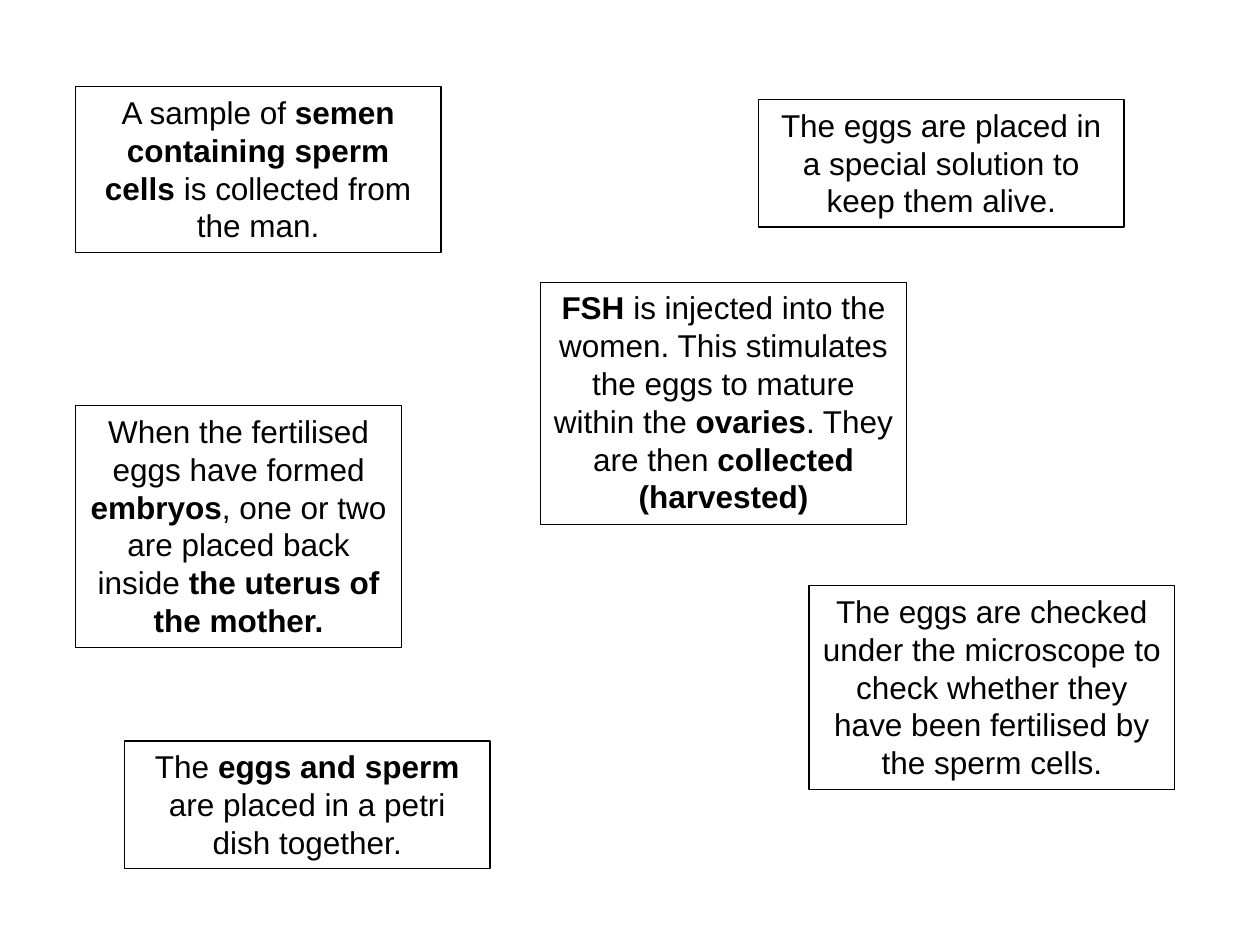
"""Build a slide of six scattered cards describing the stages of IVF."""
from dataclasses import dataclass

from pptx import Presentation
from pptx.dml.color import RGBColor
from pptx.enum.text import MSO_AUTO_SIZE, PP_ALIGN
from pptx.util import Cm, Pt

CENTER = PP_ALIGN.CENTER
GROW = MSO_AUTO_SIZE.SHAPE_TO_FIT_TEXT
BLANK_LAYOUT = 6
BOLD_MARK = "*"


@dataclass(frozen=True)
class Theme:
    font: str = "Arial"
    size: Pt = Pt(18)
    ink: RGBColor = RGBColor(0, 0, 0)
    border: Pt = Pt(0.75)
    card_width: float = 7.37
    narrow_width: float = 6.58
    line_height: float = 0.77
    padding: float = 0.26


THEME = Theme()

STAGES = [
    (10.9, 5.69, THEME.card_width, 6,
     "*FSH* is injected into the women. This stimulates the eggs to mature "
     "within the *ovaries*. They are then *collected (harvested)*"),
    (1.52, 1.75, THEME.card_width, 4,
     "A sample of *semen containing sperm cells *is collected from the man."),
    (15.29, 2.01, THEME.card_width, 3,
     "The eggs are placed in a special solution to keep them alive."),
    (16.31, 11.81, THEME.card_width, 5,
     "The eggs are checked under the microscope to check whether they have "
     "been fertilised by the sperm cells."),
    (2.51, 14.94, THEME.card_width, 3,
     "The *eggs and sperm *are placed in a petri dish together."),
    (1.52, 8.18, THEME.narrow_width, 6,
     "When the fertilised eggs have formed *embryos*, one or two are placed "
     "back inside *the uterus of the mother.*"),
]


def write_marked_text(paragraph, marked_text):
    paragraph.alignment = CENTER
    for index, part in enumerate(marked_text.split(BOLD_MARK)):
        if not part:
            continue
        run = paragraph.add_run()
        run.text = part
        run.font.name = THEME.font
        run.font.size = THEME.size
        run.font.bold = index % 2 == 1
        run.font.color.rgb = THEME.ink


def add_card(slide, left, top, width, line_count, marked_text):
    height = line_count * THEME.line_height + THEME.padding
    card = slide.shapes.add_textbox(Cm(left), Cm(top), Cm(width), Cm(height))
    card.line.color.rgb = THEME.ink
    card.line.width = THEME.border
    text_frame = card.text_frame
    text_frame.word_wrap = True
    text_frame.auto_size = GROW
    write_marked_text(text_frame.paragraphs[0], marked_text)


def main():
    presentation = Presentation()
    presentation.slide_width = Cm(25.4)
    presentation.slide_height = Cm(19.05)
    slide = presentation.slides.add_slide(presentation.slide_layouts[BLANK_LAYOUT])
    for stage in STAGES:
        add_card(slide, *stage)
    presentation.save("out.pptx")


if __name__ == "__main__":
    main()
